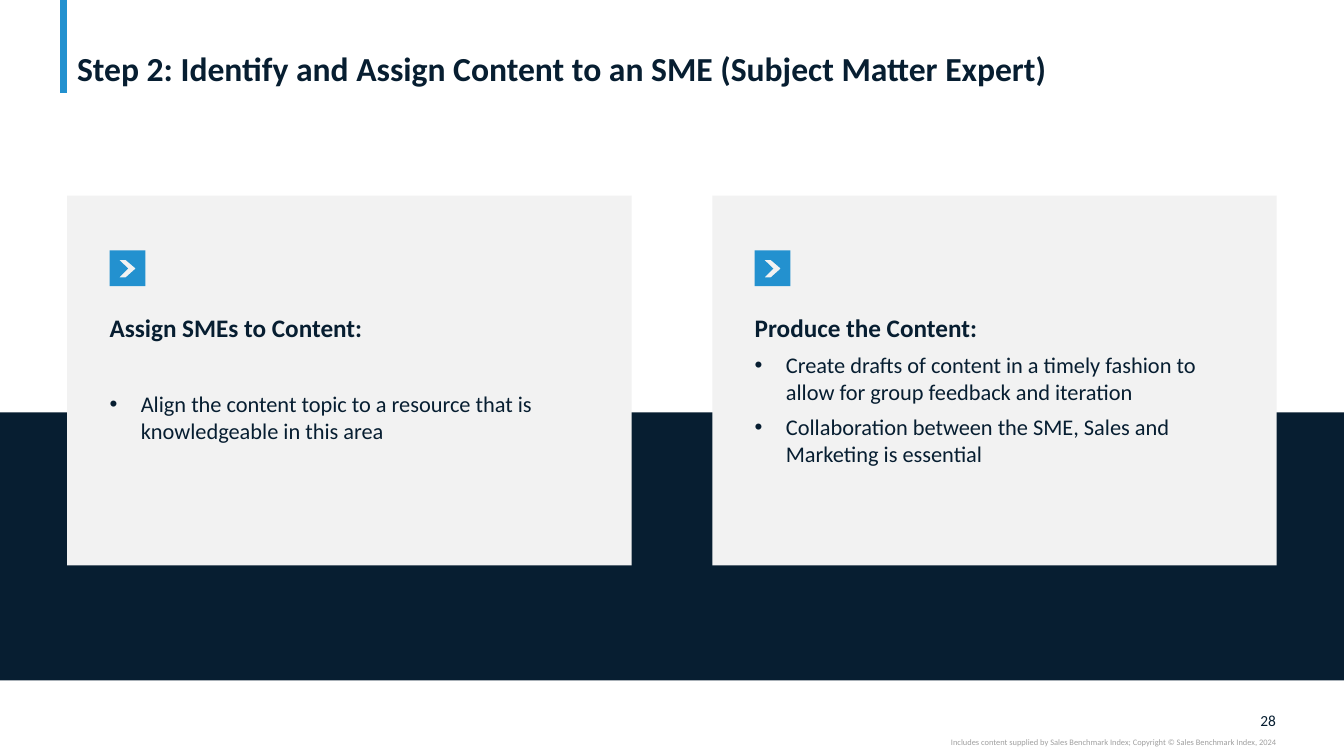
from dataclasses import dataclass
from typing import Any

import pptx
import pptx.dml.color
import pptx.enum.shapes
import pptx.enum.text
import pptx.oxml.ns
import pptx.util
from lxml import etree

ALIGN = pptx.enum.text.PP_ALIGN
ANCHOR = pptx.enum.text.MSO_ANCHOR
COLUMNS, ROWS = 160, 90


@dataclass(frozen=True)
class Theme:
    font: str = "Calibri"
    navy: str = "071E31"
    blue: str = "2391CF"
    panel: str = "F2F2F2"
    muted: str = "A0A0A0"
    title_size: float = 24
    heading_size: float = 18
    bullet_size: float = 16
    number_size: float = 11
    credit_size: float = 6
    accent_width: float = 5


@dataclass(frozen=True)
class Area:
    """A region in grid columns and rows."""
    left: float
    top: float
    width: float
    height: float


@dataclass(frozen=True)
class Line:
    text: str
    size: float
    color: str
    bold: bool = False
    bullet: bool = False
    after: float = 0
    spacing: float = 1.0
    align: Any = ALIGN.LEFT


@dataclass(frozen=True)
class Card:
    column: float
    heading: str
    heading_gap: float
    bullets: tuple[str, ...]


THEME = Theme()
CARD_TOP, CARD_WIDTH, CARD_HEIGHT = 23.3, 67.2, 44
CARD_INSET, ICON_TOP, ICON_SIZE, COPY_TOP = 5.05, 29.8, 4.25, 37.2
LEFT_MARGIN, GUTTER = 8, 9.6
# Corners as shares of the icon; the two outlines run in opposite directions
ICON_SQUARE = ((0, 0), (1, 0), (1, 1), (0, 1))
ICON_CHEVRON = ((0.27, 0.27), (0.52, 0.51), (0.27, 0.76), (0.45, 0.76), (0.73, 0.51), (0.45, 0.27))

CARDS = (
    Card(LEFT_MARGIN, "Assign SMEs to Content:", 34,
         ("Align the content topic to a resource that is knowledgeable in this area",)),
    Card(LEFT_MARGIN + CARD_WIDTH + GUTTER, "Produce the Content:", 6,
         ("Create drafts of content in a timely fashion to allow for group feedback and iteration",
          "Collaboration between the SME, Sales and Marketing is essential")),
)

deck = pptx.Presentation()
deck.slide_width = pptx.util.Inches(13.33)
deck.slide_height = pptx.util.Inches(7.5)


def col(count: float) -> int:
    return round(deck.slide_width * count / COLUMNS)


def row(count: float) -> int:
    return round(deck.slide_height * count / ROWS)


def place(area: Area) -> tuple[int, int, int, int]:
    return col(area.left), row(area.top), col(area.width), row(area.height)


def rgb(color: str) -> pptx.dml.color.RGBColor:
    return pptx.dml.color.RGBColor.from_string(color)


def apply(target: Any, values: dict[str, Any]) -> None:
    for name, value in values.items():
        setattr(target, name, value)


def paint(shape: Any, color: str) -> None:
    shape.shadow.inherit = False
    shape.fill.solid()
    shape.fill.fore_color.rgb = rgb(color)
    shape.line.fill.background()


def add_panel(slide: Any, area: Area, color: str) -> None:
    rectangle = pptx.enum.shapes.MSO_SHAPE.RECTANGLE
    paint(slide.shapes.add_shape(rectangle, *place(area)), color)


def add_copy(slide: Any, area: Area, lines: list[Line], anchor: Any = ANCHOR.TOP,
             side_inset: float = 0) -> None:
    frame = slide.shapes.add_textbox(*place(area)).text_frame
    inset = pptx.util.Inches(side_inset)
    apply(frame, {"word_wrap": True, "vertical_anchor": anchor, "margin_left": inset,
                  "margin_right": inset, "margin_top": 0, "margin_bottom": 0})
    for index, line in enumerate(lines):
        paragraph = frame.add_paragraph() if index else frame.paragraphs[0]
        apply(paragraph, {"alignment": line.align, "line_spacing": line.spacing,
                          "space_after": pptx.util.Pt(line.after)})
        if line.bullet:
            properties = paragraph._p.get_or_add_pPr()
            indent = pptx.util.Inches(0.31)
            properties.set("marL", str(indent))
            properties.set("indent", str(-indent))
            for tag, key, value in (("a:buFont", "typeface", "Arial"), ("a:buChar", "char", "•")):
                etree.SubElement(properties, pptx.oxml.ns.qn(tag)).set(key, value)
        run = paragraph.add_run()
        run.text = line.text
        apply(run.font, {"name": THEME.font, "size": pptx.util.Pt(line.size), "bold": line.bold})
        run.font.color.rgb = rgb(line.color)


def add_icon(slide: Any, left: float) -> None:
    def corners(outline: tuple[tuple[float, float], ...]) -> list[tuple[int, int]]:
        return [(col(left + x * ICON_SIZE), row(ICON_TOP + y * ICON_SIZE)) for x, y in outline]

    square, chevron = corners(ICON_SQUARE), corners(ICON_CHEVRON)
    builder = slide.shapes.build_freeform(*square[0])
    builder.add_line_segments(square[1:])
    builder.move_to(*chevron[0])
    builder.add_line_segments(chevron[1:])
    paint(builder.convert_to_shape(), THEME.blue)


def add_card(slide: Any, card: Card) -> None:
    add_panel(slide, Area(card.column, CARD_TOP, CARD_WIDTH, CARD_HEIGHT), THEME.panel)
    inner = card.column + CARD_INSET
    heading = Line(card.heading, THEME.heading_size, THEME.navy, bold=True, after=card.heading_gap)
    bullets = [Line(text, THEME.bullet_size, THEME.navy, bullet=True, after=6)
               for text in card.bullets]
    add_copy(slide, Area(inner, COPY_TOP, 57.2, 18), [heading, *bullets])
    add_icon(slide, inner)


def add_accent(slide: Any) -> None:
    straight = pptx.enum.shapes.MSO_CONNECTOR.STRAIGHT
    accent = slide.shapes.add_connector(straight, col(7.6), 0, col(7.6), row(11.1))
    accent.line.color.rgb = rgb(THEME.blue)
    accent.line.width = pptx.util.Pt(THEME.accent_width)
    etree.SubElement(accent._element.spPr, pptx.oxml.ns.qn("a:effectLst"))


def main() -> None:
    slide = deck.slides.add_slide(deck.slide_layouts[6])

    # Accent line and footer
    add_accent(slide)
    add_copy(slide, Area(147.9, 84.6, 4, 2.3),
             [Line("28", THEME.number_size, THEME.navy, align=ALIGN.RIGHT)], ANCHOR.MIDDLE)
    credit = "Includes content supplied by Sales Benchmark Index; Copyright © Sales Benchmark Index, 2024"
    add_copy(slide, Area(90, 87.8, 61.9, 1.2),
             [Line(credit, THEME.credit_size, THEME.muted, align=ALIGN.RIGHT)])

    # Dark band and title
    add_panel(slide, Area(0, 49.1, COLUMNS, 31.9), THEME.navy)
    title = "Step 2: Identify and Assign Content to an SME (Subject Matter Expert)"
    add_copy(slide, Area(LEFT_MARGIN, 0.5, 144, 10.1),
             [Line(title, THEME.title_size, THEME.navy, bold=True, spacing=0.9)],
             ANCHOR.BOTTOM, side_inset=0.1)

    # Cards
    for card in CARDS:
        add_card(slide, card)

    deck.save("out.pptx")


if __name__ == "__main__":
    main()
